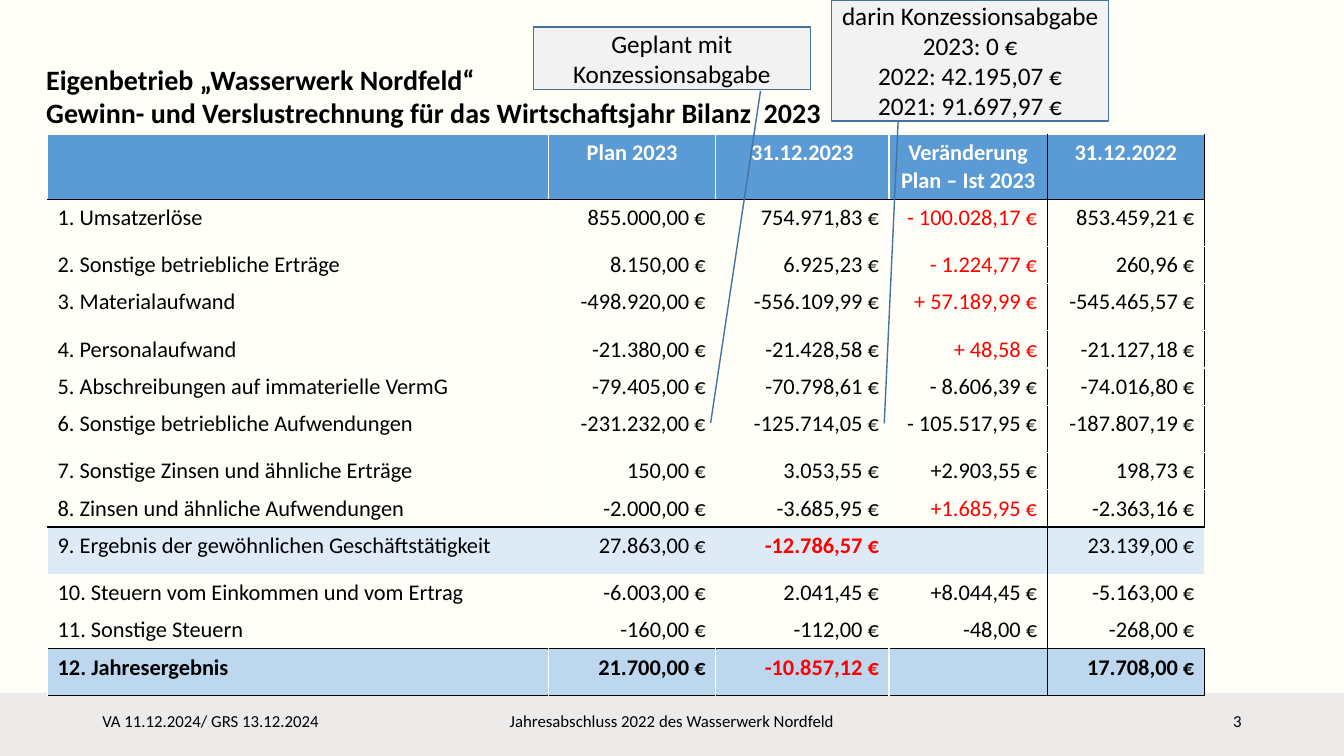
import pptx
import pptx.util
import pptx.dml.color
import pptx.enum.shapes
import pptx.enum.text
import pptx.oxml
import pptx.oxml.ns
from lxml import etree

Pt = pptx.util.Pt
ALIGN = pptx.enum.text.PP_ALIGN
ANCHOR = pptx.enum.text.MSO_ANCHOR

# Content
TITLE = ("Eigenbetrieb „Wasserwerk Nordfeld“\n"
         "Gewinn- und Verslustrechnung für das Wirtschaftsjahr Bilanz  2023")
HEADER = ("", "Plan 2023", "31.12.2023", "Veränderung\nPlan – Ist 2023", "31.12.2022")
STATEMENT = [
    ("1. Umsatzerlöse", "855.000,00 €", "754.971,83 €", "- 100.028,17 €", "853.459,21 €"),
    ("2. Sonstige betriebliche Erträge", "8.150,00 €", "6.925,23 €", "- 1.224,77 €", "260,96 €"),
    ("3. Materialaufwand", "-498.920,00 €", "-556.109,99 €", "+ 57.189,99 €", "-545.465,57 €"),
    ("4. Personalaufwand", "-21.380,00 €", "-21.428,58 €", "+ 48,58 €", "-21.127,18 €"),
    ("5. Abschreibungen auf immaterielle VermG", "-79.405,00 €", "-70.798,61 €",
     "- 8.606,39 €", "-74.016,80 €"),
    ("6. Sonstige betriebliche Aufwendungen", "-231.232,00 €", "-125.714,05 €",
     "- 105.517,95 €", "-187.807,19 €"),
    ("7. Sonstige Zinsen und ähnliche Erträge", "150,00 €", "3.053,55 €", "+2.903,55 €", "198,73 €"),
    ("8. Zinsen und ähnliche Aufwendungen", "-2.000,00 €", "-3.685,95 €", "+1.685,95 €", "-2.363,16 €"),
    ("9. Ergebnis der gewöhnlichen Geschäftstätigkeit", "27.863,00 €", "-12.786,57 €", "", "23.139,00 €"),
    ("10. Steuern vom Einkommen und vom Ertrag", "-6.003,00 €", "2.041,45 €", "+8.044,45 €", "-5.163,00 €"),
    ("11. Sonstige Steuern", "-160,00 €", "-112,00 €", "-48,00 €", "-268,00 €"),
    ("12. Jahresergebnis", "21.700,00 €", "-10.857,12 €", "", "17.708,00 €"),
]
UNFAVOURABLE = {(1, 3), (2, 3), (3, 3), (4, 3), (8, 3), (9, 2), (12, 2)}
BOLD_CELLS = {(9, 2)}
# Text, box (left, top, width, height), pointer (start y, start x, end y, end x)
CALLOUTS = [
    ("darin Konzessionsabgabe\n2023: 0 €\n2022: 42.195,07 €\n2021: 91.697,97 €",
     (594, 0, 198, 86.4), (1.01, 0.24, 3.5, 0.19)),
    ("Geplant mit Konzessionsabgabe", (380.9, 19.4, 198, 44.6), (1.02, 0.82, 6.34, 0.64)),
]
FOOTERS = [
    ("VA 11.12.2024/ GRS 13.12.2024", 66, 216, ALIGN.LEFT),
    ("Jahresabschluss 2022 des Wasserwerk Nordfeld", 318, 324, ALIGN.CENTER),
    ("3", 678, 216, ALIGN.RIGHT),
]

# Theme and geometry
THEME = {
    "font": "Calibri", "title": 20, "callout": 18, "table": 16, "footer": 12,
    "page": "FFFFF8", "band": "E7E6E6", "text": "000000", "white": "FFFFFF",
    "red": "FF0000", "header": "5B9BD5", "subtotal": "DEEBF7", "total": "BDD7EE",
    "box": "F2F2F2", "outline": "43739E",
}
SLIDE_WIDTH, SLIDE_HEIGHT, BAND_HEIGHT = 960, 540, 45
TABLE_LEFT, TABLE_TOP = 34, 96
COLUMN_WIDTHS = (357.8, 119.5, 123.8, 113, 112.3)
HEADER_HEIGHT, TALL_ROW, SHORT_ROW = 46.3, 33.6, 26.7
TALL_ROWS = {1, 3, 6, 9, 12}
ROW_FILLS = {0: "header", 9: "subtotal", 12: "total"}
BLACK_RULES = {1, 9, 12, 13}
OPEN_ROWS = {9, 10, 11}


def color(name):
    return pptx.dml.color.RGBColor.from_string(THEME[name])


def write(text_frame, text, size, align, color_name="text", bold=False):
    text_frame.text = text
    for paragraph in text_frame.paragraphs:
        paragraph.alignment = align
        for run in paragraph.runs:
            run.font.name = THEME["font"]
            run.font.size = Pt(THEME[size])
            run.font.bold = bold
            run.font.color.rgb = color(color_name)


def add_text(slide, text, box, size, align=ALIGN.LEFT, anchor=ANCHOR.TOP, bold=False):
    text_frame = slide.shapes.add_textbox(*map(Pt, box)).text_frame
    text_frame.word_wrap = True
    text_frame.vertical_anchor = anchor
    write(text_frame, text, size, align, bold=bold)


def add_filled(slide, kind, box, fill):
    shape = slide.shapes.add_shape(kind, *map(Pt, box))
    shape.shadow.inherit = False
    shape.fill.solid()
    shape.fill.fore_color.rgb = color(fill)
    return shape


def horizontal_rule(edge):
    if edge in BLACK_RULES:
        return "text"
    return None if edge in (10, 11) else "white"


def vertical_rule(edge, row):
    if edge == 4:
        return "text"
    if row in OPEN_ROWS:
        return None
    return "text" if edge == 5 and row > 0 or edge == 5 else "white"


def set_borders(cell, row, column):
    sides = {
        "lnL": vertical_rule(column, row), "lnR": vertical_rule(column + 1, row),
        "lnT": horizontal_rule(row), "lnB": horizontal_rule(row + 1),
    }
    qn = pptx.oxml.ns.qn
    properties = cell._tc.get_or_add_tcPr()
    for tag, name in sides.items():
        line = etree.SubElement(properties, qn("a:" + tag), w=str(Pt(1)))
        if name is None:
            etree.SubElement(line, qn("a:noFill"))
        else:
            fill = etree.SubElement(line, qn("a:solidFill"))
            etree.SubElement(fill, qn("a:srgbClr"), val=THEME[name])


def add_statement(slide):
    rows = [HEADER] + STATEMENT
    heights = [HEADER_HEIGHT] + [TALL_ROW if row in TALL_ROWS else SHORT_ROW
                                 for row in range(1, len(rows))]
    table = slide.shapes.add_table(
        len(rows), len(HEADER), Pt(TABLE_LEFT), Pt(TABLE_TOP),
        Pt(sum(COLUMN_WIDTHS)), Pt(sum(heights))).table
    table.horz_banding = False
    for column, width in enumerate(COLUMN_WIDTHS):
        table.columns[column].width = Pt(width)
    for row, values in enumerate(rows):
        table.rows[row].height = Pt(heights[row])
        for column, value in enumerate(values):
            cell = table.cell(row, column)
            set_borders(cell, row, column)
            if row in ROW_FILLS:
                cell.fill.solid()
                cell.fill.fore_color.rgb = color(ROW_FILLS[row])
            else:
                cell.fill.background()
            text_color = "white" if row == 0 else "red" if (row, column) in UNFAVOURABLE else "text"
            align = ALIGN.CENTER if row == 0 else ALIGN.LEFT if column == 0 else ALIGN.RIGHT
            bold = row in (0, 12) or (row, column) in BOLD_CELLS
            write(cell.text_frame, value, "table", align, text_color, bold)


def main():
    presentation = pptx.Presentation()
    presentation.slide_width, presentation.slide_height = Pt(SLIDE_WIDTH), Pt(SLIDE_HEIGHT)
    slide = presentation.slides.add_slide(presentation.slide_layouts[6])
    slide.background.fill.solid()
    slide.background.fill.fore_color.rgb = color("page")

    # Footer band and footer texts
    band = add_filled(slide, pptx.enum.shapes.MSO_SHAPE.RECTANGLE,
                      (0, SLIDE_HEIGHT - BAND_HEIGHT, SLIDE_WIDTH, BAND_HEIGHT), "band")
    band.line.fill.background()
    band_color = band.fill._xPr.find(".//" + pptx.oxml.ns.qn("a:srgbClr"))
    etree.SubElement(band_color, pptx.oxml.ns.qn("a:alpha"), val="78000")
    for text, left, width, align in FOOTERS:
        add_text(slide, text, (left, 500.5, width, 28.8), "footer", align, ANCHOR.MIDDLE)

    # Income statement and title
    add_statement(slide)
    add_text(slide, TITLE, (25.9, 41, 671.8, 55.4), "title", bold=True)

    # Callouts with pointers into the table
    for text, box, pointer in CALLOUTS:
        callout = add_filled(slide, pptx.enum.shapes.MSO_SHAPE.LINE_CALLOUT_1, box, "box")
        for index, value in enumerate(pointer):
            callout.adjustments[index] = value
        callout.line.color.rgb = color("outline")
        callout.line.width = Pt(1)
        callout.text_frame.word_wrap = True
        callout.text_frame.vertical_anchor = ANCHOR.MIDDLE
        write(callout.text_frame, text, "callout", ALIGN.CENTER)

    presentation.save("out.pptx")


if __name__ == "__main__":
    main()
